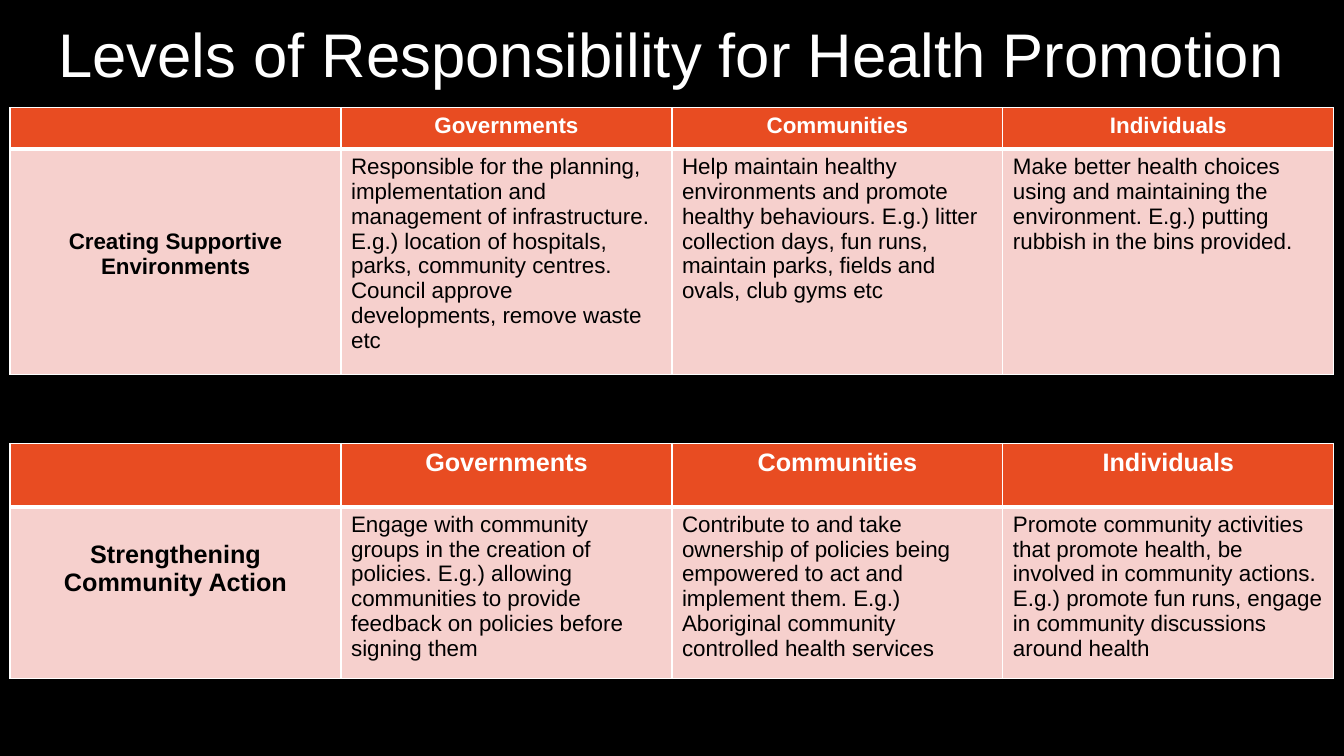
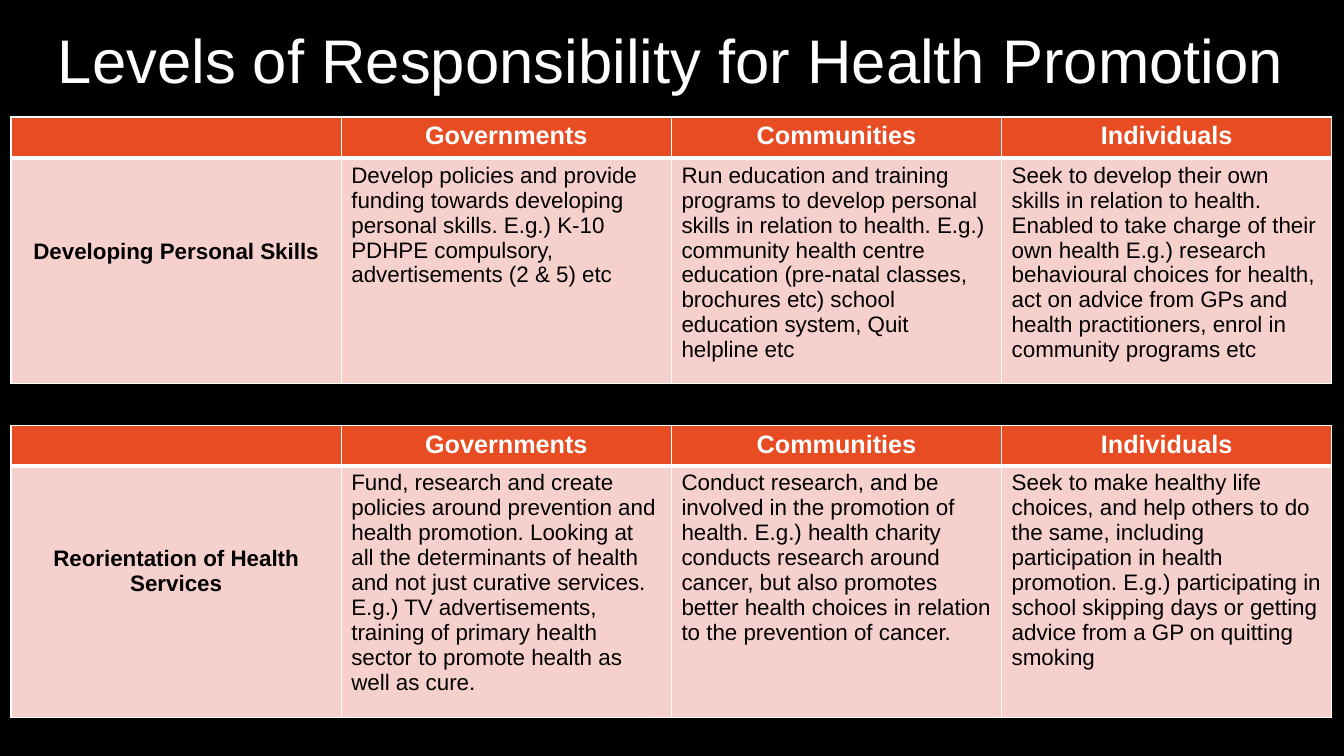
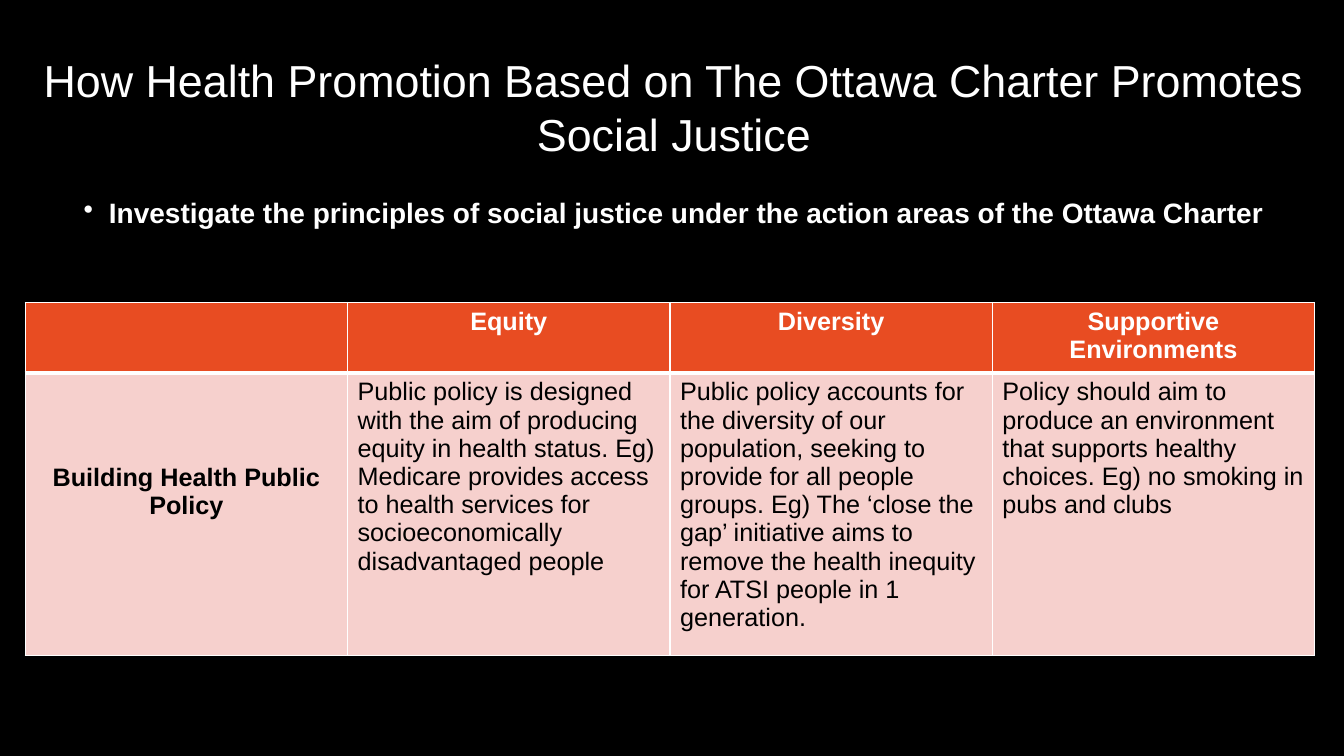
import pptx
import pptx.dml.color
import pptx.enum.text
import pptx.oxml
import pptx.oxml.ns
import pptx.util
from pptx.util import Inches

COLORS = {"back": "000000", "light": "FFFFFF", "dark": "000000",
          "header": "E84C22", "body": "F6D0CD"}
FONT = "Arial"
CENTER = pptx.enum.text.PP_ALIGN.CENTER
LEFT = pptx.enum.text.PP_ALIGN.LEFT
LEVELS = ["", "Governments", "Communities", "Individuals"]
LEVELS_TITLE = "Levels of Responsibility for Health Promotion"

# at: left, top, width; rows: header and body height; drop: top margin of the row label
slides = [
    {"title": (LEVELS_TITLE, 44, (0.1, 0.08, 13.13, 0.89)),
     "tables": [
         {"at": (0.1, 1.07, 13.13), "rows": (0.41, 2.07), "sizes": (16, 16, 16), "drop": 0.8,
          "header": LEVELS,
          "body": [
              "Creating Supportive Environments",
              "Responsible for the planning, implementation and management of infrastructure. "
              "E.g.) location of hospitals, parks, community centres. Council approve "
              "developments, remove waste etc",
              "Help maintain healthy environments and promote healthy behaviours. E.g.) litter "
              "collection days, fun runs, maintain parks, fields and ovals, club gyms etc",
              "Make better health choices using and maintaining the environment. E.g.) putting "
              "rubbish in the bins provided."]},
         {"at": (0.1, 4.4, 13.13), "rows": (0.63, 1.58), "sizes": (18, 18, 16), "drop": 0.33,
          "header": LEVELS,
          "body": [
              "Strengthening Community Action",
              "Engage with community groups in the creation of policies. E.g.) allowing "
              "communities to provide feedback on policies before signing them",
              "Contribute to and take ownership of policies being empowered to act and "
              "implement them. E.g.) Aboriginal community controlled health services",
              "Promote community activities that promote health, be involved in community "
              "actions. E.g.) promote fun runs, engage in community discussions around health"]},
     ]},
    {"title": (LEVELS_TITLE, 44, (0.11, 0.1, 13.1, 0.97)),
     "tables": [
         {"at": (0.11, 1.16, 13.1), "rows": (0.41, 2.07), "sizes": (18, 16, 16), "drop": 0.8,
          "header": LEVELS,
          "body": [
              "Developing Personal Skills",
              "Develop policies and provide funding towards developing personal skills. E.g.) "
              "K-10 PDHPE compulsory, advertisements (2 & 5) etc",
              "Run education and training programs to develop personal skills in relation to "
              "health. E.g.) community health centre education (pre-natal classes, brochures "
              "etc) school education system, Quit helpline etc",
              "Seek to develop their own skills in relation to health. Enabled to take charge "
              "of their own health E.g.) research behavioural choices for health, act on advice "
              "from GPs and health practitioners, enrol in community programs etc"]},
         {"at": (0.11, 4.22, 13.1), "rows": (0.4, 2.32), "sizes": (18, 16, 16), "drop": 0.8,
          "header": LEVELS,
          "body": [
              "Reorientation of Health Services",
              "Fund, research and create policies around prevention and health promotion. "
              "Looking at all the determinants of health and not just curative services. E.g.) "
              "TV advertisements, training of primary health sector to promote health as well "
              "as cure.",
              "Conduct research, and be involved in the promotion of health. E.g.) health "
              "charity conducts research around cancer, but also promotes better health choices "
              "in relation to the prevention of cancer.",
              "Seek to make healthy life choices, and help others to do the same, including "
              "participation in health promotion. E.g.) participating in school skipping days or "
              "getting advice from a GP on quitting smoking"]},
     ]},
    {"title": ("How Health Promotion Based on The Ottawa Charter Promotes Social Justice", 32,
               (0.29, 0.18, 12.79, 1.75)),
     "bullet": ("Investigate the principles of social justice under the action areas of the "
                "Ottawa Charter", 20, (0.29, 1.93, 12.79, 5.32)),
     "tables": [
         {"at": (0.25, 3, 12.79), "rows": (0.66, 2.62), "sizes": (18, 18, 18), "drop": 0.9,
          "header": ["", "Equity", "Diversity", "Supportive Environments"],
          "body": [
              "Building Health Public Policy",
              "Public policy is designed with the aim of producing equity in health status. Eg) "
              "Medicare provides access to health services for socioeconomically disadvantaged "
              "people",
              "Public policy accounts for the diversity of our population, seeking to provide "
              "for all people groups. Eg) The ‘close the gap’ initiative aims to remove the "
              "health inequity for ATSI people in 1 generation.",
              "Policy should aim to produce an environment that supports healthy choices. Eg) "
              "no smoking in pubs and clubs"]},
     ]},
]


def write(tf, text, size, color, bold, align):
    """Put one formatted paragraph into a text frame."""
    p = tf.paragraphs[0]
    p.alignment = align
    r = p.add_run()
    r.text = text
    fmt = {"name": FONT, "size": pptx.util.Pt(size), "bold": bold}
    for key, value in fmt.items():
        setattr(r.font, key, value)
    r.font.color.rgb = pptx.dml.color.RGBColor.from_string(COLORS[color])
    return p


def set_borders(cell, widths):
    """Draw white cell borders; widths in points, ordered L, R, T, B."""
    tcPr = cell._tc.get_or_add_tcPr()
    for i, (side, width) in enumerate(zip("LRTB", widths)):
        tcPr.insert(i, pptx.oxml.parse_xml(
            f'<a:ln{side} {pptx.oxml.ns.nsdecls("a")} w="{pptx.util.Pt(width)}"><a:solidFill>'
            f'<a:srgbClr val="{COLORS["light"]}"/></a:solidFill></a:ln{side}>'))


prs = pptx.Presentation()
prs.slide_width, prs.slide_height = Inches(13.33), Inches(7.5)

# Shared black background
fill = prs.slide_master.background.fill
fill.solid()
fill.fore_color.rgb = pptx.dml.color.RGBColor.from_string(COLORS["back"])

for content in slides:
    s = prs.slides.add_slide(prs.slide_layouts[6])

    # Bullet line
    if "bullet" in content:
        text, size, at = content["bullet"]
        tf = s.shapes.add_textbox(*map(Inches, at)).text_frame
        tf.word_wrap = True
        p = write(tf, text, size, "light", True, CENTER)
        p.line_spacing = 0.9
        pPr = p._p.get_or_add_pPr()
        pPr.set("marL", str(Inches(0.25)))
        pPr.set("indent", str(Inches(-0.25)))
        pPr.append(pptx.oxml.parse_xml(
            f'<a:buChar {pptx.oxml.ns.nsdecls("a")} char="•"/>'))

    # Title
    text, size, at = content["title"]
    tf = s.shapes.add_textbox(*map(Inches, at)).text_frame
    tf.word_wrap = True
    tf.vertical_anchor = pptx.enum.text.MSO_ANCHOR.MIDDLE
    write(tf, text, size, "light", False, CENTER)

    # Tables: a header row and one body row that starts with its label
    for data in content["tables"]:
        left, top, width = data["at"]
        table = s.shapes.add_table(2, 4, Inches(left), Inches(top), Inches(width),
                                   Inches(sum(data["rows"]))).table
        table.horz_banding = False
        header_size, label_size, body_size = data["sizes"]
        for row, height in zip(table.rows, data["rows"]):
            row.height = Inches(height)
        for i, name in enumerate(("header", "body")):
            for j, text in enumerate(data[name]):
                cell = table.cell(i, j)
                cell.fill.solid()
                cell.fill.fore_color.rgb = pptx.dml.color.RGBColor.from_string(COLORS[name])
                set_borders(cell, (1, 1, 1, 3) if i == 0 else (1, 1, 3, 1))
                if i == 0:
                    if text:
                        write(cell.text_frame, text, header_size, "light", True, CENTER)
                elif j == 0:
                    cell.margin_top = Inches(data["drop"])
                    write(cell.text_frame, text, label_size, "dark", True, CENTER)
                else:
                    write(cell.text_frame, text, body_size, "dark", False, LEFT)

prs.save("out.pptx")
